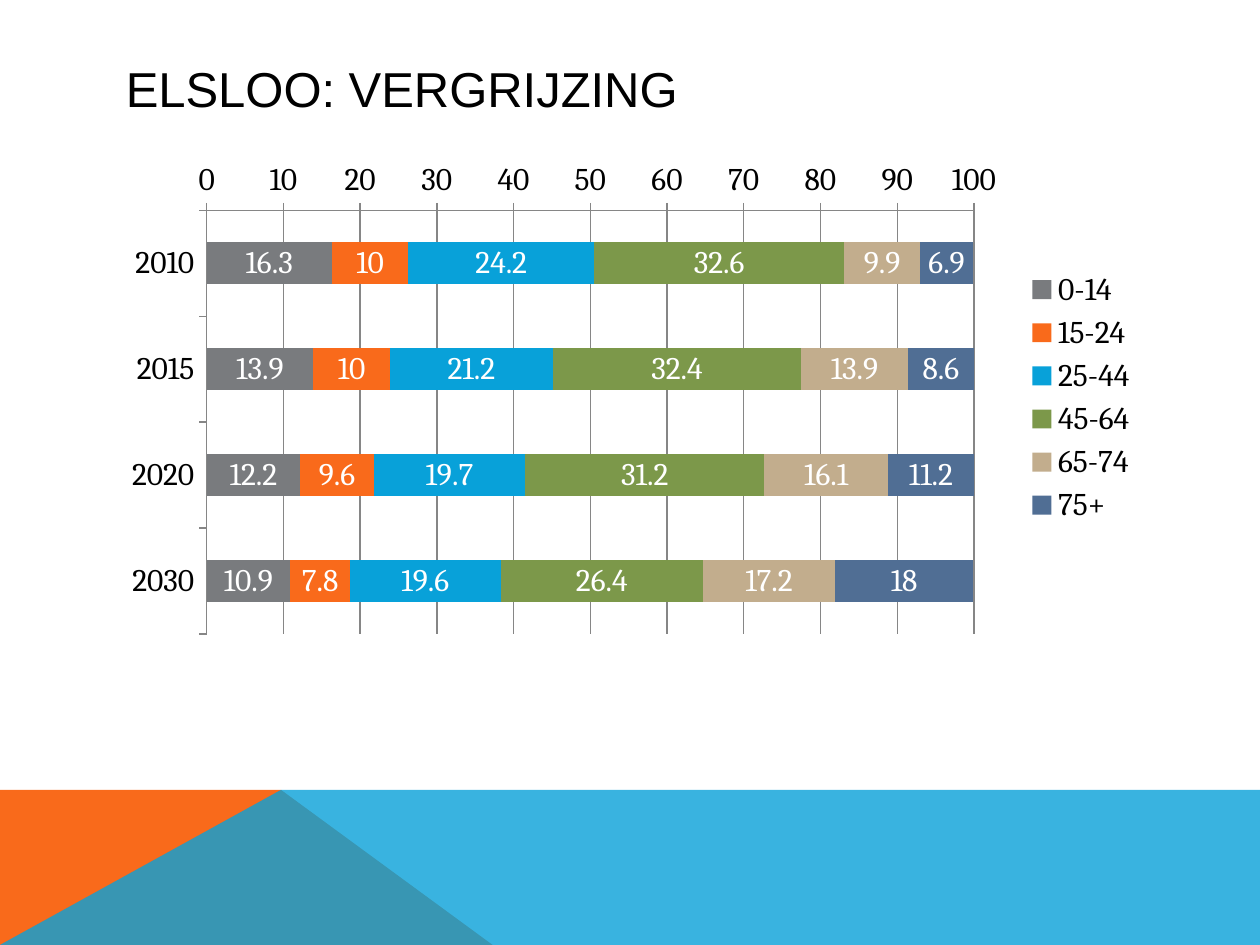
from dataclasses import dataclass

import lxml.etree
import pptx
import pptx.chart.data
import pptx.dml.color
import pptx.enum.chart
import pptx.enum.text
import pptx.oxml.ns
import pptx.util

Pt = pptx.util.Pt
qn = pptx.oxml.ns.qn

BLACK, WHITE, GRID_GREY = "000000", "FFFFFF", "868686"
ORANGE, BLUE = "F96A1B", "08A1D9"
SLIDE_WIDTH, SLIDE_HEIGHT = 720, 540
BAND_TOP, PEAK_X, FOOT_X = 451.4, 160.6, 281.5
YEARS = ["2010", "2015", "2020", "2030"]
PLOT_LAYOUT = {"x": 0.09, "y": 0.12, "w": 0.74, "h": 0.86}


@dataclass(frozen=True)
class Band:
    points: list[tuple[float, float]]
    color: str
    opacity: int = 100


@dataclass(frozen=True)
class AgeGroup:
    label: str
    shares: list[float]
    color: str


BANDS = [
    Band([(0, SLIDE_HEIGHT), (0, BAND_TOP), (PEAK_X, BAND_TOP), (FOOT_X, SLIDE_HEIGHT)], ORANGE),
    Band(
        [(0, SLIDE_HEIGHT), (PEAK_X, BAND_TOP), (SLIDE_WIDTH, BAND_TOP), (SLIDE_WIDTH, SLIDE_HEIGHT)],
        BLUE,
        80,
    ),
]

AGE_GROUPS = [
    AgeGroup("0-14", [16.3, 13.9, 12.2, 10.9], "797B7E"),
    AgeGroup("15-24", [10, 10, 9.6, 7.8], ORANGE),
    AgeGroup("25-44", [24.2, 21.2, 19.7, 19.6], BLUE),
    AgeGroup("45-64", [32.6, 32.4, 31.2, 26.4], "7C984A"),
    AgeGroup("65-74", [9.9, 13.9, 16.1, 17.2], "C2AD8D"),
    AgeGroup("75+", [6.9, 8.6, 11.2, 18], "506E94"),
]


def rgb(color: str) -> pptx.dml.color.RGBColor:
    return pptx.dml.color.RGBColor.from_string(color)


def fill_solid(fill, color: str) -> None:
    fill.solid()
    fill.fore_color.rgb = rgb(color)


def style_font(font, name: str, size: float, color: str) -> None:
    font.name = name
    font.size = Pt(size)
    font.color.rgb = rgb(color)


def draw_band(slide, band: Band) -> None:
    start, *rest = [(Pt(x), Pt(y)) for x, y in band.points]
    builder = slide.shapes.build_freeform(*start)
    builder.add_line_segments(rest, close=True)
    shape = builder.convert_to_shape()
    shape.shadow.inherit = False
    fill_solid(shape.fill, band.color)
    shape.line.fill.background()
    if band.opacity < 100:
        tint = shape.fill._xPr.find(qn("a:solidFill"))[0]
        lxml.etree.SubElement(tint, qn("a:alpha"), val=str(band.opacity * 1000))


def draw_title(slide, text: str) -> None:
    title = slide.shapes.add_textbox(Pt(64.8), Pt(28.8), Pt(592), Pt(43.2))
    frame = title.text_frame
    frame.word_wrap = True
    frame.vertical_anchor = pptx.enum.text.MSO_ANCHOR.MIDDLE
    frame.text = text
    style_font(frame.paragraphs[0].runs[0].font, "Arial", 28, BLACK)


def place_plot(chart) -> None:
    plot_area = chart._chartSpace.chart.plotArea
    for old_layout in plot_area.findall(qn("c:layout")):
        plot_area.remove(old_layout)
    layout = lxml.etree.SubElement(plot_area, qn("c:layout"))
    plot_area.insert(0, layout)
    manual = lxml.etree.SubElement(layout, qn("c:manualLayout"))
    settings = {"layoutTarget": "inner", "xMode": "edge", "yMode": "edge", **PLOT_LAYOUT}
    for tag, value in settings.items():
        lxml.etree.SubElement(manual, qn(f"c:{tag}"), val=str(value))


def draw_age_chart(slide, groups: list[AgeGroup]) -> None:
    age_data = pptx.chart.data.CategoryChartData()
    age_data.categories = YEARS
    for group in groups:
        age_data.add_series(group.label, group.shares)
    chart = slide.shapes.add_chart(
        pptx.enum.chart.XL_CHART_TYPE.BAR_STACKED,
        Pt(64.8), Pt(86.4), Pt(592.5), Pt(281.5), age_data,
    ).chart
    chart.has_title = False
    style_font(chart.font, "Cambria", 18, BLACK)
    chart.has_legend = True
    chart.legend.position = pptx.enum.chart.XL_LEGEND_POSITION.RIGHT
    chart.legend.include_in_layout = False

    years, shares = chart.category_axis, chart.value_axis
    years.reverse_order = True
    shares.minimum_scale, shares.maximum_scale, shares.major_unit = 0, 100, 10
    shares.has_major_gridlines = True
    for axis in (years, shares):
        axis.major_tick_mark = pptx.enum.chart.XL_TICK_MARK.OUTSIDE
    for line in (years.format.line, shares.format.line, shares.major_gridlines.format.line):
        line.color.rgb = rgb(GRID_GREY)
        line.width = Pt(0.75)

    plot = chart.plots[0]
    plot.vary_by_categories = False
    plot.gap_width, plot.overlap = 150, 100
    for series, group in zip(plot.series, groups):
        fill_solid(series.format.fill, group.color)
        labels = series.data_labels
        labels.show_value = True
        style_font(labels.font, "Cambria", 18, WHITE)
    place_plot(chart)


def main() -> None:
    deck = pptx.Presentation()
    deck.slide_width, deck.slide_height = Pt(SLIDE_WIDTH), Pt(SLIDE_HEIGHT)
    slide = deck.slides.add_slide(deck.slide_layouts[6])
    fill_solid(slide.background.fill, WHITE)
    for band in BANDS:
        draw_band(slide, band)
    draw_title(slide, "ELSLOO: VERGRIJZING")
    draw_age_chart(slide, AGE_GROUPS)
    deck.save("out.pptx")


if __name__ == "__main__":
    main()
